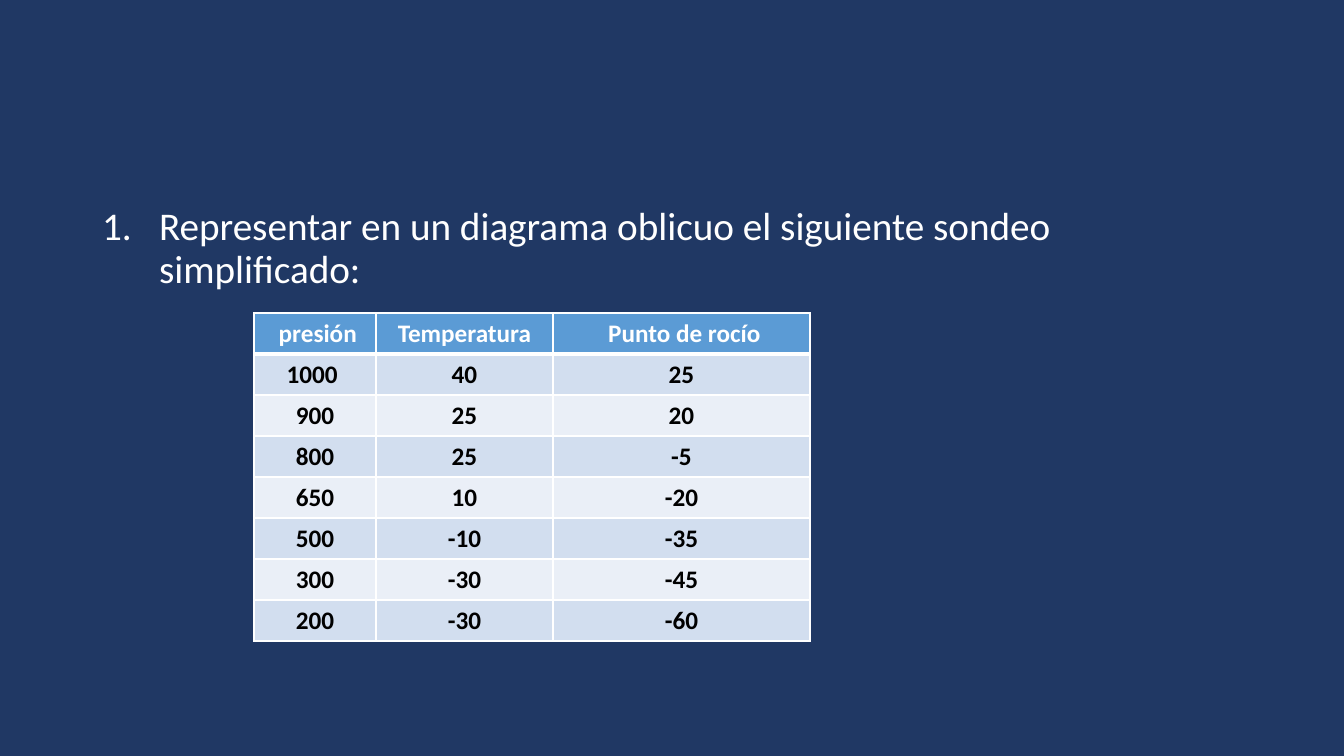
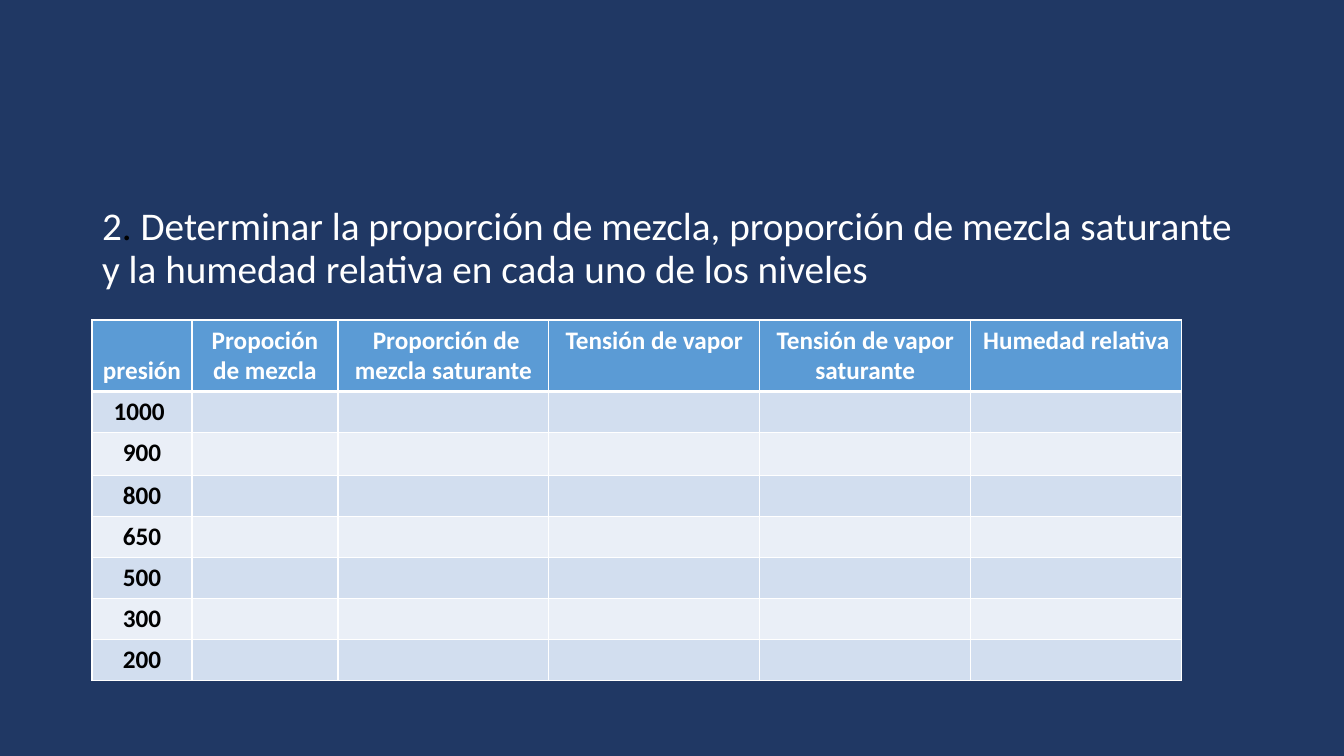
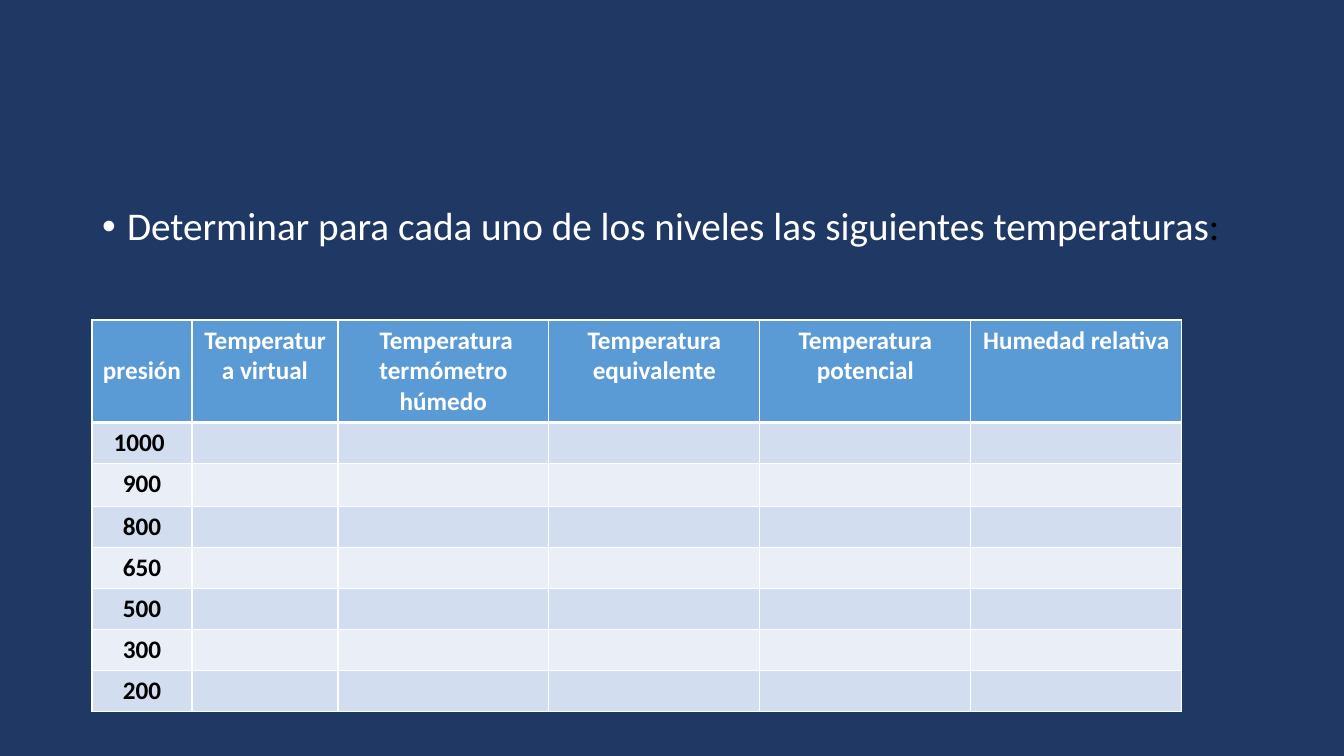
from lxml import etree
from pptx import Presentation
from pptx import util as u
from pptx.dml.color import RGBColor
from pptx.enum import text
from pptx.oxml import ns

PX = 914400 / 100.8
FONT = "Calibri"
NAVY = RGBColor(0x20, 0x38, 0x64)
WHITE = RGBColor(0xFF, 0xFF, 0xFF)
BLACK = RGBColor(0x00, 0x00, 0x00)
HEADER_BLUE = RGBColor(0x5B, 0x9B, 0xD5)
BANDS = (RGBColor(0xD2, 0xDE, 0xEF), RGBColor(0xEA, 0xEF, 0xF7))

BODY_BOX = (92, 202, 1159, 480)
ROW_HEIGHT = 41
LEVELS = ["1000 ", "900", "800", "650", "500", "300", "200"]
TEMPERATURES = ["40", "25", "25", "10", "-10", "-30", "-30"]
DEW_POINTS = ["25", "20", "-5", "-20", "-35", "-45", "-60"]
WORKSHEET_COLUMNS = [100, 146] + [211] * 4


def px(length):
    return u.Emu(round(length * PX))


def add_run(paragraph, words, size, color, bold=False):
    run = paragraph.add_run()
    run.text = words
    run.font.name = FONT
    run.font.size = u.Pt(size)
    run.font.bold = bold
    run.font.color.rgb = color


def set_bullet(paragraph, indent, bullet_font, tag, **attributes):
    properties = paragraph._p.get_or_add_pPr()
    properties.set("marL", str(px(indent)))
    properties.set("indent", str(-px(indent)))
    if bullet_font:
        etree.SubElement(properties, ns.qn("a:buFont"), typeface=bullet_font)
    etree.SubElement(properties, ns.qn(tag), **attributes)


def add_exercise_slide(presentation, runs, bullet):
    slide = presentation.slides.add_slide(presentation.slide_layouts[1])
    title = slide.shapes.title.element
    title.getparent().remove(title)
    body = slide.placeholders[1]
    body.left, body.top, body.width, body.height = map(px, BODY_BOX)
    body.text_frame.auto_size = text.MSO_AUTO_SIZE.NONE
    paragraph = body.text_frame.paragraphs[0]
    paragraph.line_spacing = 0.9
    paragraph.space_before = u.Pt(10)
    set_bullet(paragraph, **bullet)
    for words, color in runs:
        add_run(paragraph, words, 28, color)
    return slide


def set_borders(cell, top, bottom):
    properties = cell._tc.get_or_add_tcPr()
    for side, points in (("L", 1), ("R", 1), ("T", top), ("B", bottom)):
        line = etree.SubElement(properties, ns.qn(f"a:ln{side}"), w=str(u.Pt(points)))
        fill = etree.SubElement(line, ns.qn("a:solidFill"))
        etree.SubElement(fill, ns.qn("a:srgbClr"), val=str(WHITE))


def format_cell(cell, words, row):
    set_borders(cell, 3 if row == 1 else 1, 3 if row == 0 else 1)
    cell.fill.solid()
    cell.fill.fore_color.rgb = BANDS[(row - 1) % 2] if row else HEADER_BLUE
    paragraph = cell.text_frame.paragraphs[0]
    paragraph.alignment = text.PP_ALIGN.CENTER
    if words:
        add_run(paragraph, words, 18, BLACK if row else WHITE, bold=True)


def add_level_table(slide, left, top, widths, rows, tall_rows=()):
    heights = [43 if row in tall_rows else ROW_HEIGHT for row in range(len(rows))]
    table = slide.shapes.add_table(
        len(rows), len(widths), px(left), px(top), px(sum(widths)), px(sum(heights))
    ).table
    table.horz_banding = False
    for column, width in zip(table.columns, widths):
        column.width = px(width)
    for table_row, height in zip(table.rows, heights):
        table_row.height = px(height)
    for row, values in enumerate(rows):
        for column, words in enumerate(values):
            format_cell(table.cell(row, column), words, row)


def add_worksheet(slide, headings):
    blanks = [""] * len(headings)
    rows = [[" presión", *headings]] + [[level, *blanks] for level in LEVELS]
    add_level_table(slide, 92, 320, WORKSHEET_COLUMNS, rows, tall_rows=(2,))


def main():
    presentation = Presentation()
    presentation.slide_width, presentation.slide_height = px(1344), px(756)
    background = presentation.slide_master.background.fill
    background.solid()
    background.fore_color.rgb = NAVY

    numbered = dict(indent=57, bullet_font=FONT, tag="a:buAutoNum", type="arabicPeriod")
    plain = dict(indent=0, bullet_font=None, tag="a:buNone")
    dotted = dict(indent=25, bullet_font="Arial", tag="a:buChar", char="•")

    sounding = add_exercise_slide(
        presentation,
        [("Representar en un diagrama oblicuo el siguiente sondeo simplificado:", WHITE)],
        numbered,
    )
    headings = (" presión", "Temperatura", " Punto de rocío")
    rows = [headings, *zip(LEVELS, TEMPERATURES, DEW_POINTS)]
    add_level_table(sounding, 254, 313, [122, 177, 257], rows)

    humidity = add_exercise_slide(
        presentation,
        [
            ("2", WHITE),
            (".", BLACK),
            (" Determinar la proporción de mezcla, proporción de mezcla saturante "
             "y la humedad relativa en cada uno de los niveles", WHITE),
        ],
        plain,
    )
    add_worksheet(humidity, [
        "Propoción de mezcla", " Proporción de mezcla saturante", "Tensión de vapor",
        "Tensión de vapor saturante", "Humedad relativa",
    ])

    temperatures = add_exercise_slide(
        presentation,
        [
            ("Determinar para cada uno de los niveles las siguientes temperaturas", WHITE),
            (":", BLACK),
        ],
        dotted,
    )
    add_worksheet(temperatures, [
        "Temperatura virtual", " Temperatura termómetro húmedo", "Temperatura equivalente",
        "Temperatura potencial", "Humedad relativa",
    ])

    presentation.save("out.pptx")


if __name__ == "__main__":
    main()
